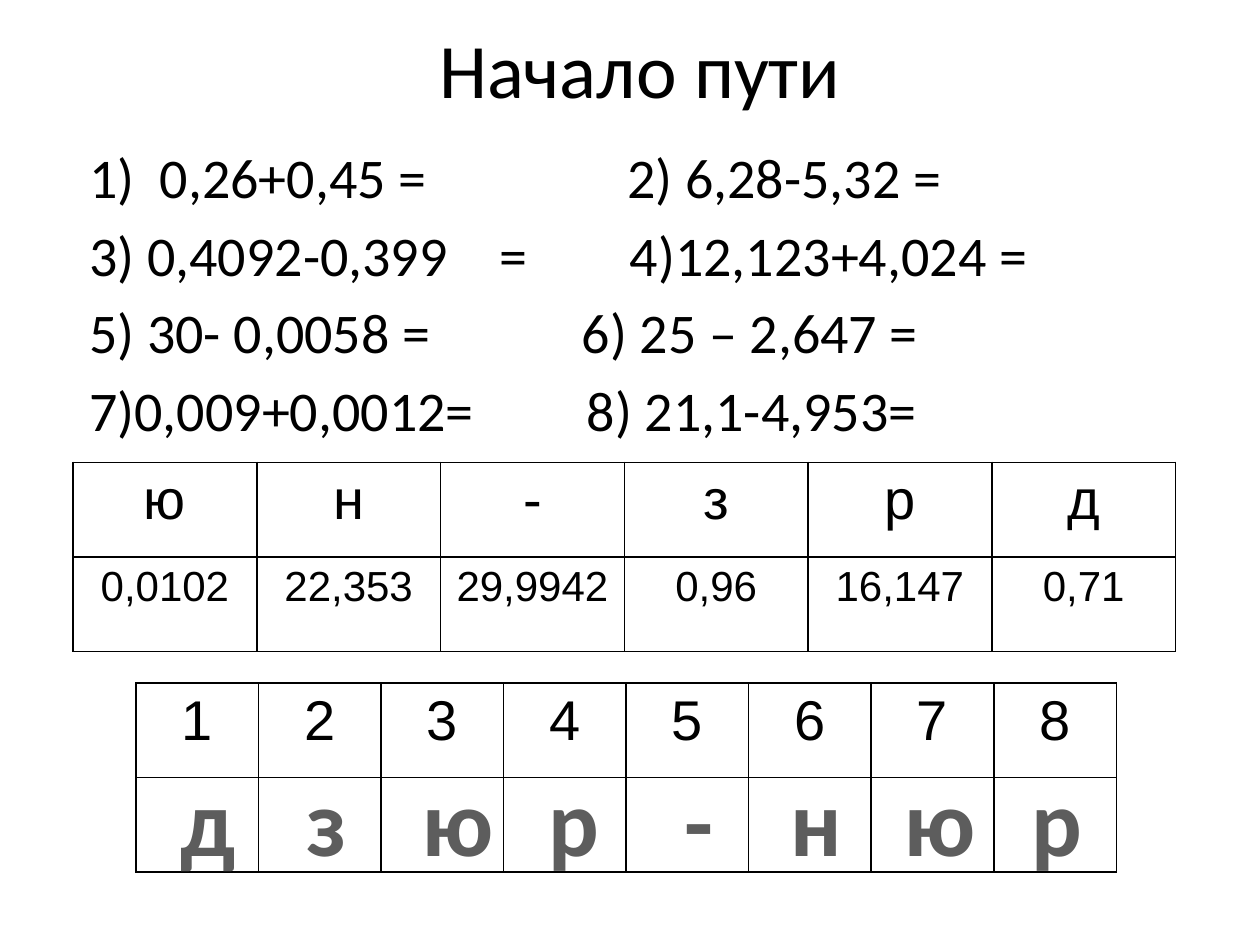
from typing import NamedTuple

from lxml.etree import SubElement
from pptx import Presentation
from pptx.dml.color import RGBColor
from pptx.enum.text import MSO_ANCHOR, PP_ALIGN as Align
from pptx.oxml.ns import qn
from pptx.util import Inches, Pt

BLACK = RGBColor(0x00, 0x00, 0x00)
GRAY = RGBColor(0x5D, 0x5D, 0x5D)


class Task(NamedTuple):
    text: str
    tabs: tuple[float, ...]


class Grid(NamedTuple):
    left: float
    top: float
    width: float
    rows: tuple[tuple[list[str], int], ...]  # cell texts and font size


class Letter(NamedTuple):
    text: str
    left: float
    width: float


TASKS = [
    Task("1)  0,26+0,45 =\t2) 6,28-5,32 =", (4.27,)),
    Task("3) 0,4092-0,399\t=\t4)12,123+4,024 =", (3.26, 4.29)),
    Task("5) 30- 0,0058 =\t6) 25 – 2,647 =", (3.91,)),
    Task("7)0,009+0,0012=\t8) 21,1-4,953=", (3.95,)),
]
GRIDS = [
    Grid(0.58, 3.67, 8.75, (
        (list("юн-зрд"), 32),
        (["0,0102", "22,353", "29,9942", "0,96", "16,147", "0,71"], 24))),
    Grid(1.08, 5.42, 7.78, ((list("12345678"), 32), ([""] * 8, 32))),
]
LETTERS = [
    Letter("д", 1.33, 0.64), Letter("з", 2.33, 0.52),
    Letter("ю", 3.25, 0.77), Letter("р", 4.25, 0.61),
    Letter("-", 5.33, 0.43), Letter("н", 6.17, 0.62),
    Letter("ю", 7.08, 0.77), Letter("р", 8.08, 0.61),
]
ROW_H = 0.75


def write(p, text: str, *, size: int, font="Calibri", color=BLACK,
          bold=False, align=Align.CENTER) -> None:
    p.alignment = align
    r = p.add_run()
    r.text = text
    r.font.name, r.font.size, r.font.bold = font, Pt(size), bold
    r.font.color.rgb = color


def add_box(s, left: float, top: float, width: float, height: float,
            wrap=True, anchor=MSO_ANCHOR.TOP):
    tf = s.shapes.add_textbox(Inches(left), Inches(top),
                              Inches(width), Inches(height)).text_frame
    tf.word_wrap = wrap
    tf.vertical_anchor = anchor
    return tf


def set_tabs(p, stops: tuple[float, ...]) -> None:
    tabs = SubElement(p._p.get_or_add_pPr(), qn("a:tabLst"))
    for stop in stops:
        SubElement(tabs, qn("a:tab"), pos=str(Inches(stop)), algn="l")


def set_borders(cell) -> None:
    tc_pr = cell._tc.get_or_add_tcPr()
    for i, side in enumerate(("lnL", "lnR", "lnT", "lnB")):
        ln = SubElement(tc_pr, qn(f"a:{side}"), w=str(Pt(1)))
        fill = SubElement(ln, qn("a:solidFill"))
        SubElement(fill, qn("a:srgbClr"), val=str(BLACK))
        tc_pr.insert(i, ln)  # borders come before the fill


def add_grid(s, grid: Grid) -> None:
    n_rows, n_cols = len(grid.rows), len(grid.rows[0][0])
    table = s.shapes.add_table(n_rows, n_cols, Inches(grid.left), Inches(grid.top),
                               Inches(grid.width), Inches(ROW_H * n_rows)).table
    table.first_row = table.horz_banding = False
    for i, (texts, size) in enumerate(grid.rows):
        for j, text in enumerate(texts):
            cell = table.cell(i, j)
            cell.fill.background()
            set_borders(cell)
            if text:
                write(cell.text_frame.paragraphs[0], text, size=size, font="Arial")


def main() -> None:
    prs = Presentation()
    prs.slide_width, prs.slide_height = Inches(10), Inches(7.5)
    s = prs.slides.add_slide(prs.slide_layouts[6])

    # Title
    tf = add_box(s, 0.58, 0, 9, 1.08, anchor=MSO_ANCHOR.MIDDLE)
    write(tf.paragraphs[0], "Начало пути", size=44)

    # Tasks, two to a line
    tf = add_box(s, 0.61, 1.08, 8.89, 2.55)
    for i, task in enumerate(TASKS):
        p = tf.add_paragraph() if i else tf.paragraphs[0]
        p.space_before = Pt(6)
        set_tabs(p, task.tabs)
        write(p, task.text, size=32, align=Align.LEFT)

    # Key and answer tables
    for grid in GRIDS:
        add_grid(s, grid)

    # Answer letters over the empty row
    for letter in LETTERS:
        tf = add_box(s, letter.left, 6, letter.width, 1.01, wrap=False)
        write(tf.paragraphs[0], letter.text, size=54, color=GRAY, bold=True)

    prs.save("out.pptx")


if __name__ == "__main__":
    main()
